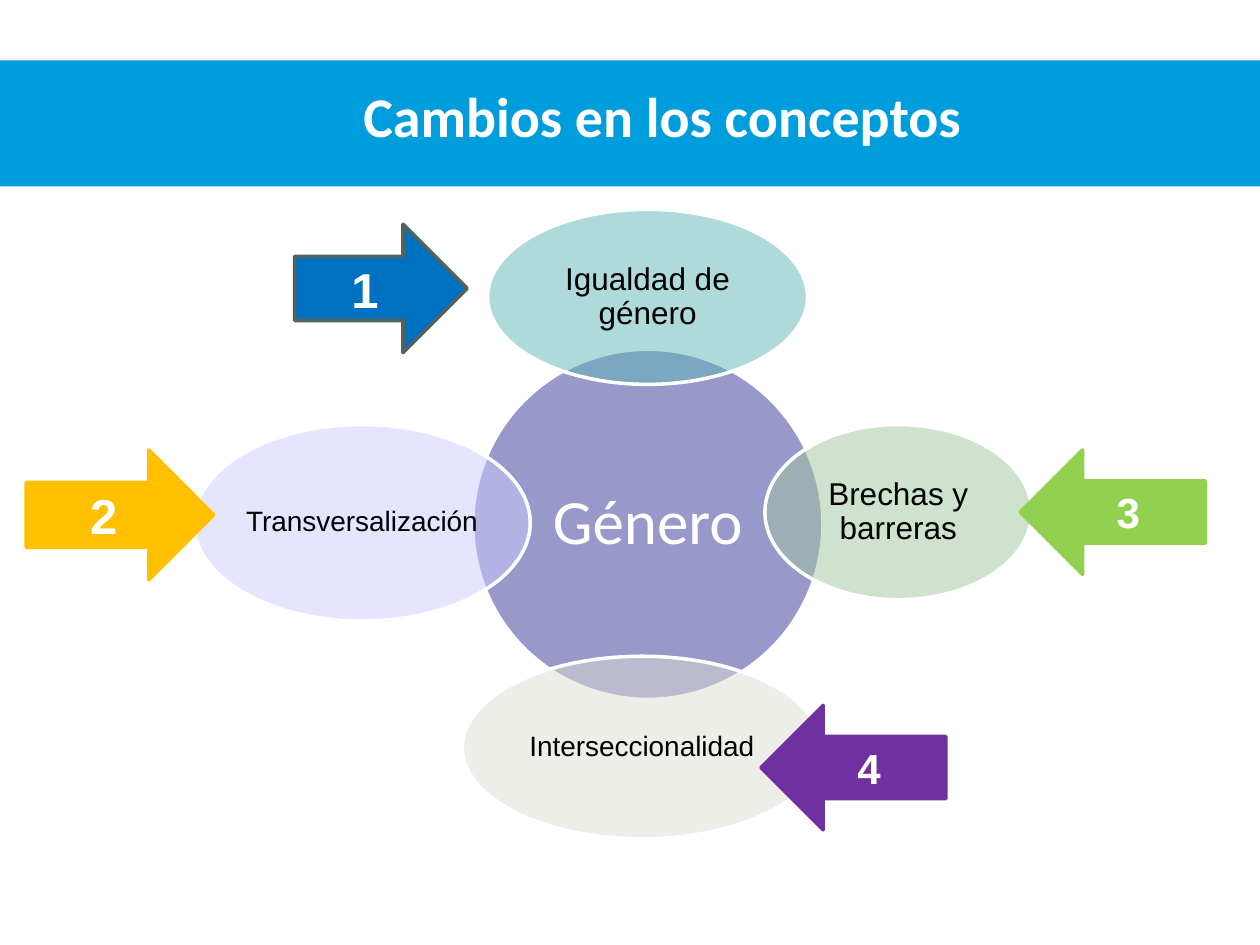
from typing import NamedTuple, Optional

from lxml import etree
from pptx import Presentation
from pptx import util as u
from pptx.dml.color import RGBColor
from pptx.enum import shapes, text
from pptx.oxml.ns import qn

WHITE = RGBColor(0xFF, 0xFF, 0xFF)
BLACK = RGBColor(0x00, 0x00, 0x00)
SKY = RGBColor(0x00, 0x9D, 0xDC)
INDIGO = RGBColor(0x33, 0x33, 0x99)
TEAL = RGBColor(0x61, 0xB7, 0xB7)
SAGE = RGBColor(0x9F, 0xC6, 0x9F)
STONE = RGBColor(0xDE, 0xDE, 0xD4)
LILAC = RGBColor(0xCC, 0xCC, 0xFF)
BLUE = RGBColor(0x00, 0x70, 0xC0)
SLATE = RGBColor(0x52, 0x62, 0x63)
AMBER = RGBColor(0xFF, 0xC0, 0x00)
LIME = RGBColor(0x92, 0xD0, 0x50)
PURPLE = RGBColor(0x70, 0x30, 0xA0)

KIND = shapes.MSO_SHAPE


class Box(NamedTuple):
    left: float
    top: float
    width: float
    height: float

    def place(self) -> list[u.Cm]:
        return [u.Cm(side) for side in self]


class Oval(NamedTuple):
    label: str
    box: Box
    fill: RGBColor
    size: int
    inset: float
    font: str = "Arial"
    ink: RGBColor = BLACK


class Arrow(NamedTuple):
    label: str
    box: Box
    kind: KIND
    fill: RGBColor
    edge: RGBColor
    size: int


OVALS = [
    Oval("Género", Box(9.53, 7.04, 7.06, 7.06), INDIGO, 36, 0.13, "Calibri", WHITE),
    Oval("Igualdad de género", Box(9.83, 4.22, 6.45, 3.53), TEAL, 18, 0.08),
    Oval("Brechas y barreras", Box(15.42, 8.56, 5.38, 3.53), SAGE, 18, 0.08),
    Oval("Interseccionalidad", Box(9.32, 13.23, 7.24, 3.68), STONE, 16, 0.05),
    Oval("Transversalización", Box(3.91, 8.56, 6.78, 3.96), LILAC, 16, 0.05),
]

ARROWS = [
    Arrow("1", Box(5.94, 4.52, 3.48, 2.59), KIND.RIGHT_ARROW, BLUE, SLATE, 28),
    Arrow("2", Box(0.53, 9.07, 3.78, 2.62), KIND.RIGHT_ARROW, AMBER, AMBER, 28),
    Arrow("3", Box(20.57, 9.07, 3.73, 2.51), KIND.LEFT_ARROW, LIME, LIME, 24),
    Arrow("4", Box(15.34, 14.22, 3.73, 2.51), KIND.LEFT_ARROW, PURPLE, PURPLE, 24),
]


def add_form(slide, kind: KIND, box: Box, fill: RGBColor, edge: Optional[RGBColor] = None):
    form = slide.shapes.add_shape(kind, *box.place())
    form.shadow.inherit = False
    form.fill.solid()
    form.fill.fore_color.rgb = fill
    if edge is None:
        form.line.fill.background()
    else:
        form.line.color.rgb = edge
        form.line.width = u.Pt(2)
    return form


def write(form, label: str, size: int, font: str, ink: RGBColor, bold: bool = False):
    frame = form.text_frame
    frame.word_wrap = True
    frame.vertical_anchor = text.MSO_ANCHOR.MIDDLE
    para = frame.paragraphs[0]
    para.text = label
    para.alignment = text.PP_ALIGN.CENTER
    para.font.name = font
    para.font.size = u.Pt(size)
    para.font.bold = bold
    para.font.color.rgb = ink
    return frame


def fade(form, share: int) -> None:
    tint = form.fill._xPr.find(qn("a:solidFill"))[0]
    etree.SubElement(tint, qn("a:alpha")).set("val", str(share * 1000))


def add_oval(slide, oval: Oval) -> None:
    form = add_form(slide, KIND.OVAL, oval.box, oval.fill, WHITE)
    fade(form, 50)
    frame = write(form, oval.label, oval.size, oval.font, oval.ink)
    frame.paragraphs[0].line_spacing = 0.9
    inset = u.Cm(oval.inset)
    frame.margin_left = frame.margin_right = inset
    frame.margin_top = frame.margin_bottom = inset


def add_arrow(slide, arrow: Arrow) -> None:
    form = add_form(slide, arrow.kind, arrow.box, arrow.fill, arrow.edge)
    write(form, arrow.label, arrow.size, "Arial", WHITE, True)


def main() -> None:
    deck = Presentation()
    deck.slide_width, deck.slide_height = u.Cm(25.4), u.Cm(19.05)
    slide = deck.slides.add_slide(deck.slide_layouts[6])
    add_form(slide, KIND.RECTANGLE, Box(0, 1.22, 25.4, 2.54), SKY)
    for oval in OVALS:
        add_oval(slide, oval)
    title = slide.shapes.add_textbox(*Box(2.41, 1.19, 21.89, 2.26).place())
    write(title, "Cambios en los conceptos", 32, "Calibri", WHITE, True)
    for arrow in ARROWS:
        add_arrow(slide, arrow)
    deck.save("out.pptx")


if __name__ == "__main__":
    main()
